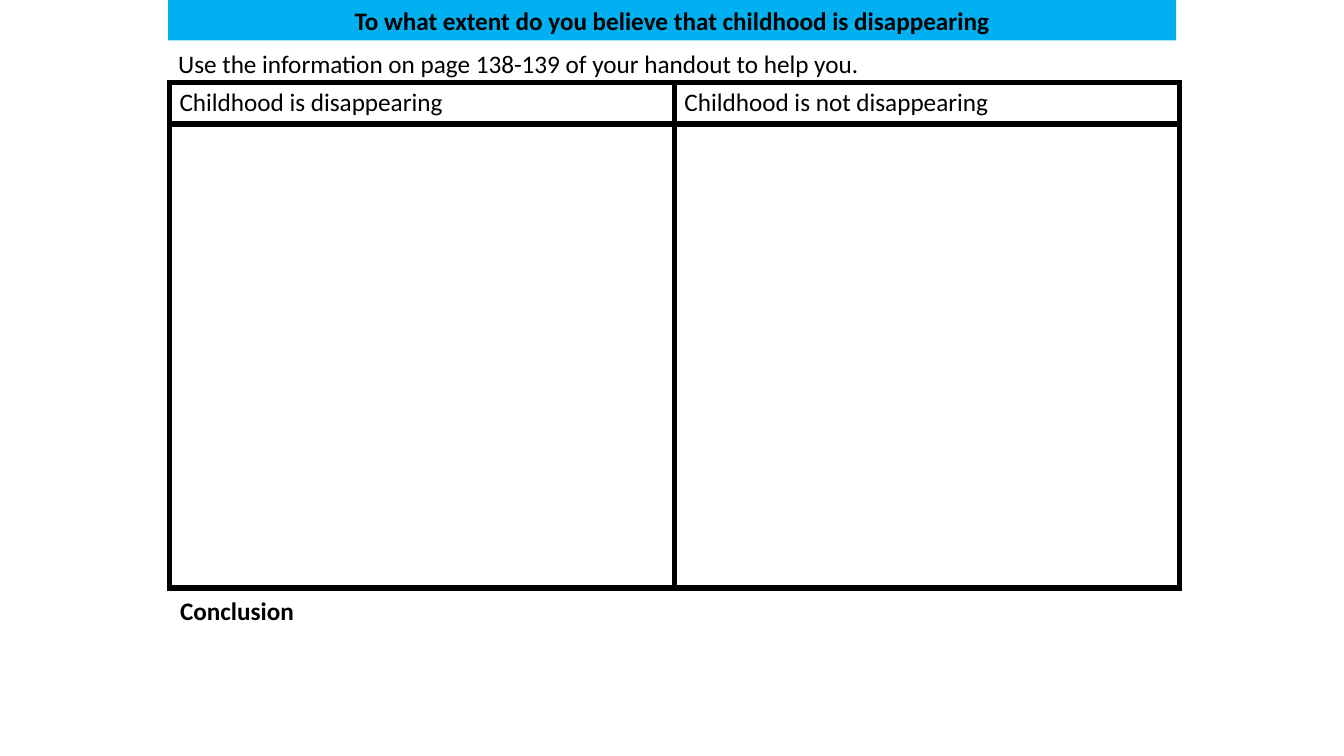
from lxml import etree
from pptx import Presentation
from pptx import util as u
from pptx.dml.color import RGBColor
from pptx.enum import shapes, text
from pptx.oxml.ns import qn

COLOURS = {"banner": "00B0F0", "ink": "000000", "paper": "FFFFFF"}
FONT = "Calibri"
BORDER = u.Pt(4.5)


def write(frame, wording, bold=False, align=text.PP_ALIGN.LEFT):
    """Write one run of wording into a wrapping text frame."""
    frame.word_wrap = True
    paragraph = frame.paragraphs[0]
    paragraph.alignment = align
    run = paragraph.add_run()
    run.text = wording
    run.font.name = FONT
    run.font.size = u.Pt(18)
    run.font.bold = bold
    run.font.color.rgb = RGBColor.from_string(COLOURS["ink"])


def add_banner(slide, box, question):
    """Place the coloured question bar in the box."""
    banner = slide.shapes.add_shape(shapes.MSO_SHAPE.RECTANGLE, *map(u.Cm, box))
    banner.shadow.inherit = False
    banner.fill.solid()
    banner.fill.fore_color.rgb = RGBColor.from_string(COLOURS["banner"])
    banner.line.fill.background()
    write(banner.text_frame, question, bold=True, align=text.PP_ALIGN.CENTER)


def add_note(slide, box, wording, bold=False):
    """Place a line of plain text in the box."""
    note = slide.shapes.add_textbox(*map(u.Cm, box))
    write(note.text_frame, wording, bold)


def style_cell(cell):
    """Give a cell a plain fill and thick borders on every side."""
    cell.fill.solid()
    cell.fill.fore_color.rgb = RGBColor.from_string(COLOURS["paper"])
    properties = cell._tc.get_or_add_tcPr()
    for position, side in enumerate(("lnL", "lnR", "lnT", "lnB")):
        border = etree.Element(qn(f"a:{side}"), w=str(BORDER))
        fill = etree.SubElement(border, qn("a:solidFill"))
        etree.SubElement(fill, qn("a:srgbClr"), val=COLOURS["ink"])
        properties.insert(position, border)


def add_arguments(slide, box, headings, heading_height):
    """Place the two-sided argument table in the box."""
    left, top, width, height = box
    arguments = slide.shapes.add_table(2, len(headings), *map(u.Cm, box)).table
    arguments.first_row = arguments.horz_banding = False
    arguments.rows[0].height = u.Cm(heading_height)
    arguments.rows[1].height = u.Cm(height - heading_height)
    for column, heading in enumerate(headings):
        arguments.columns[column].width = u.Cm(width / len(headings))
        write(arguments.cell(0, column).text_frame, heading)
    for cell in arguments.iter_cells():
        style_cell(cell)


def build_debate_slide(deck):
    """Lay out the question, instruction, argument table and conclusion."""
    slide = deck.slides.add_slide(deck.slide_layouts[6])
    left, width, line = 4.24, 25.4, 1.02
    add_note(slide, (left, 1.09, width, line),
             "Use the information on page 138-139 of your handout to help you.")
    add_arguments(slide, (4.27, 2.08, 25.45, 12.73),
                  ("Childhood is disappearing", "Childhood is not disappearing"), 1.04)
    add_note(slide, (4.29, 14.88, 13.11, line), "Conclusion", bold=True)
    add_banner(slide, (left, 0, width, line),
               "To what extent do you believe that childhood is disappearing")


def main():
    """Build and save the deck."""
    deck = Presentation()
    deck.slide_width, deck.slide_height = u.Cm(33.87), u.Cm(19.05)
    build_debate_slide(deck)
    deck.save("out.pptx")


if __name__ == "__main__":
    main()
